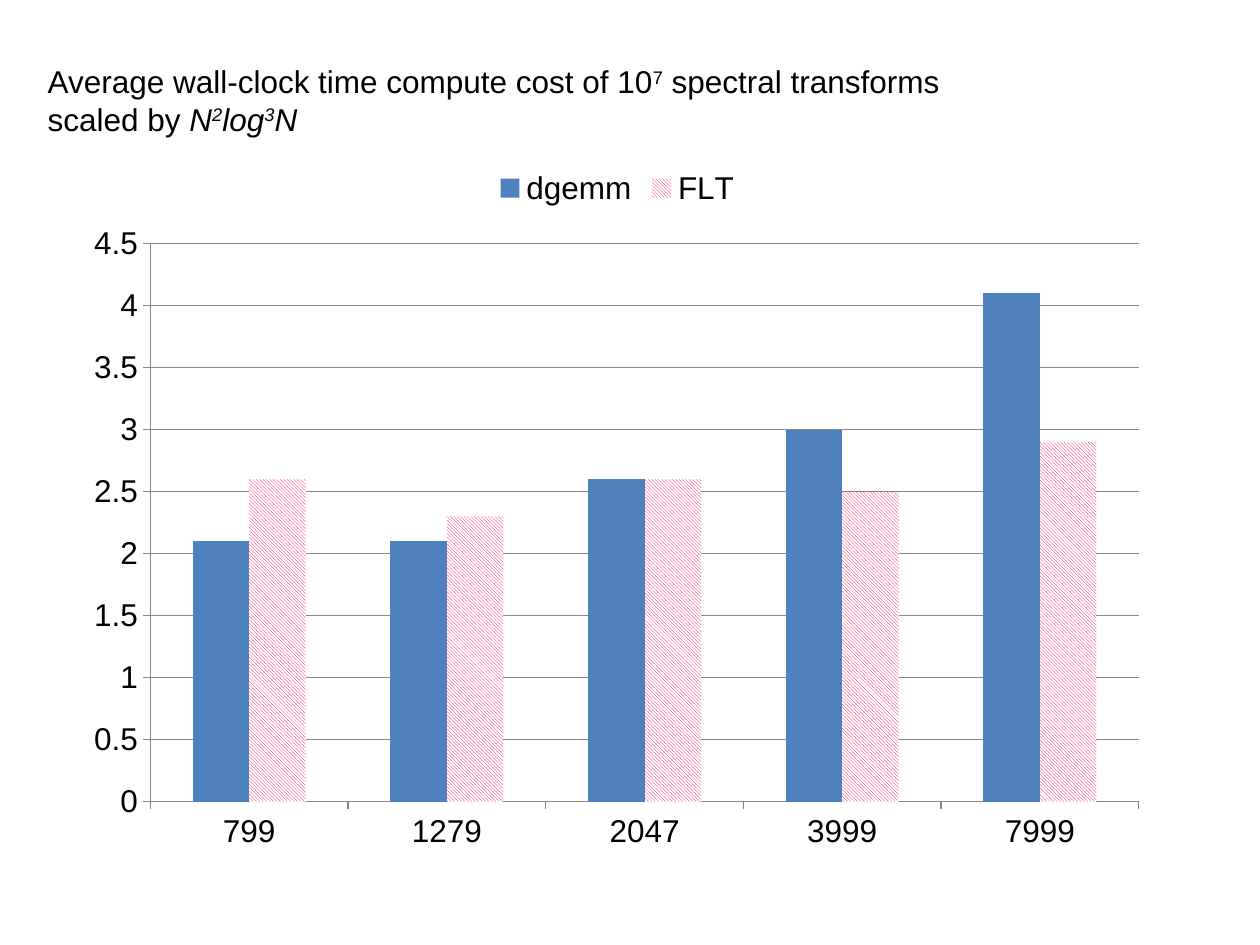
import pptx
import pptx.chart.data
import pptx.dml.color
import pptx.enum.chart
import pptx.enum.dml
import pptx.enum.text
import pptx.oxml
import pptx.oxml.ns
import pptx.util

WIDE, HIGH = 10, 7.5
FONT, SIZE = "Arial", 18
BLACK, GREY, BLUE, PINK, WHITE = "000000", "868686", "4F81BD", "FF0066", "FFFFFF"
CATS = ["799", "1279", "2047", "3999", "7999"]
COSTS = {
    "dgemm": [2.1, 2.1, 2.6, 3, 4.1],
    "FLT": [2.6, 2.3, 2.6, 2.5, 2.9],
}
PLOT = {"x": 0.07, "y": 0.125, "w": 0.91, "h": 0.785}


def color(code):
    return pptx.dml.color.RGBColor.from_string(code)


def place(left, top, width, height):
    shares = (left * WIDE, top * HIGH, width * WIDE, height * HIGH)
    return [pptx.util.Inches(share) for share in shares]


def style(font, size=SIZE, code=BLACK, slant=None):
    font.name = FONT
    font.size = pptx.util.Pt(size)
    font.color.rgb = color(code)
    font.italic = slant


def write(para, text, raised=False, **look):
    run = para.add_run()
    run.text = text
    style(run.font, **look)
    if raised:
        run._r.get_or_add_rPr().set("baseline", "30000")


def add_title(slide):
    box = slide.shapes.add_textbox(*place(0.028, 0.059, 0.897, 0.121))
    frame = box.text_frame
    frame.word_wrap = False
    frame.auto_size = pptx.enum.text.MSO_AUTO_SIZE.SHAPE_TO_FIT_TEXT
    first = frame.paragraphs[0]
    write(first, "Average wall-clock time compute cost of 10")
    write(first, "7", raised=True)
    write(first, " spectral transforms")
    second = frame.add_paragraph()
    write(second, "scaled by ")
    for text in ("N", "2", "log", "3", "N"):
        write(second, text, raised=text.isdigit(), slant=True)


def rule(line):
    line.color.rgb = color(GREY)
    line.width = pptx.util.Pt(0.75)


def fix_plot(chart):
    area = chart._chartSpace.chart.plotArea
    for old in area.findall(pptx.oxml.ns.qn("c:layout")):
        area.remove(old)
    modes = '<c:xMode val="edge"/><c:yMode val="edge"/>'
    sizes = "".join(f'<c:{key} val="{share}"/>' for key, share in PLOT.items())
    area.insert(0, pptx.oxml.parse_xml(
        f'<c:layout {pptx.oxml.ns.nsdecls("c")}><c:manualLayout>'
        f'<c:layoutTarget val="inner"/>{modes}{sizes}'
        '</c:manualLayout></c:layout>'))


def set_axes(chart):
    for axis in (chart.category_axis, chart.value_axis):
        axis.major_tick_mark = pptx.enum.chart.XL_TICK_MARK.OUTSIDE
        axis.minor_tick_mark = pptx.enum.chart.XL_TICK_MARK.NONE
        style(axis.tick_labels.font)
        rule(axis.format.line)
    scale = chart.value_axis
    scale.minimum_scale, scale.maximum_scale = 0, 4.5
    scale.major_unit = 0.5
    scale.has_major_gridlines = True
    rule(scale.major_gridlines.format.line)


def paint(plot):
    plot.gap_width = 150
    plot.overlap = 0
    plot.vary_by_categories = False
    solid, lined = [bar.format.fill for bar in plot.series]
    solid.solid()
    solid.fore_color.rgb = color(BLUE)
    lined.patterned()
    lined.pattern = pptx.enum.dml.MSO_PATTERN.DARK_DOWNWARD_DIAGONAL
    lined.fore_color.rgb = color(PINK)
    lined.back_color.rgb = color(WHITE)


def add_bars(slide):
    data = pptx.chart.data.CategoryChartData()
    data.categories = CATS
    for name, costs in COSTS.items():
        data.add_series(name, costs)
    kind = pptx.enum.chart.XL_CHART_TYPE.COLUMN_CLUSTERED
    spot = place(0.059, 0.164, 0.862, 0.752)
    chart = slide.shapes.add_chart(kind, *spot, data).chart
    style(chart.font)
    chart.has_title = False
    chart.has_legend = True
    chart.legend.position = pptx.enum.chart.XL_LEGEND_POSITION.TOP
    chart.legend.include_in_layout = False
    style(chart.legend.font)
    set_axes(chart)
    paint(chart.plots[0])
    fix_plot(chart)


def main():
    deck = pptx.Presentation()
    deck.slide_width = pptx.util.Inches(WIDE)
    deck.slide_height = pptx.util.Inches(HIGH)
    slide = deck.slides.add_slide(deck.slide_layouts[6])
    add_bars(slide)
    add_title(slide)
    deck.save("out.pptx")


if __name__ == "__main__":
    main()
